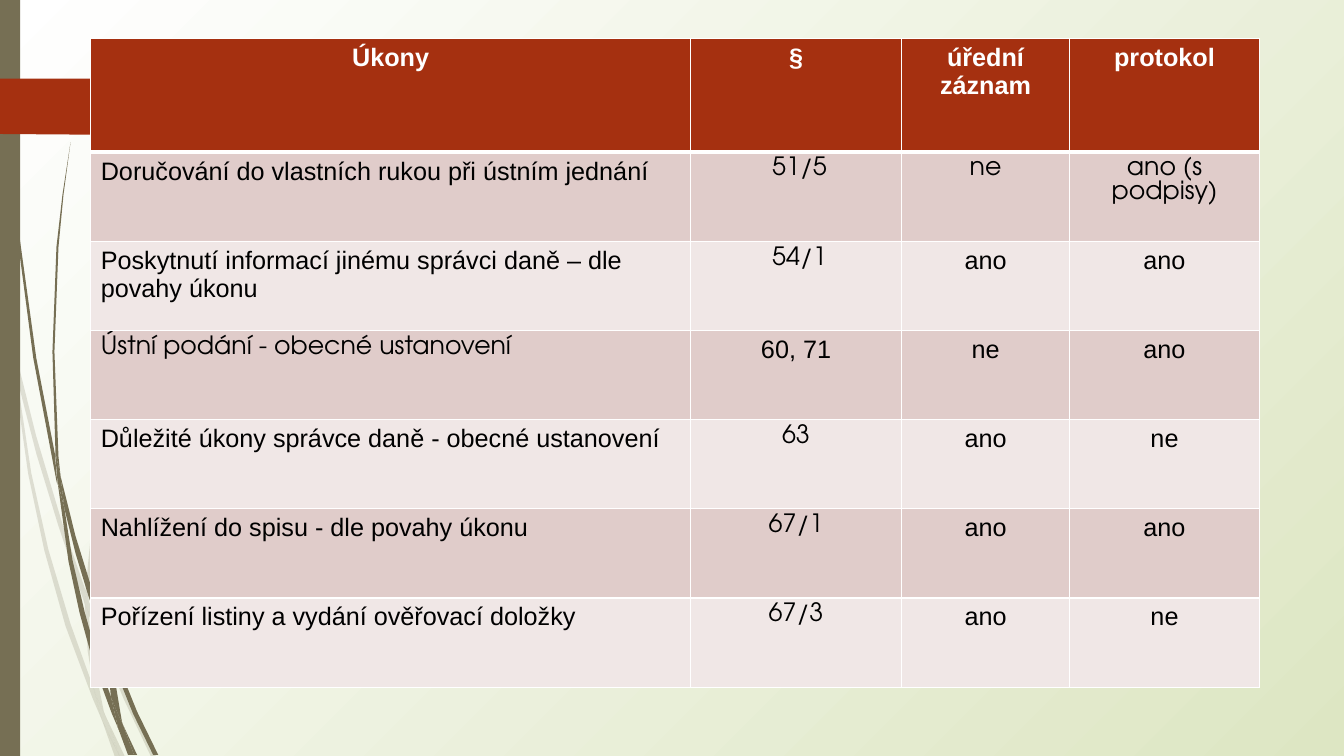
import pptx
import pptx.dml.color
import pptx.enum.shapes
import pptx.enum.text
import pptx.oxml
import pptx.oxml.ns
import pptx.util
from lxml import etree
from pptx.util import Inches

COLORS = {
    "olive": "766F54", "rust": "A53010", "white": "FFFFFF", "black": "000000",
    "green": "DDE6C3", "band": "E0CCCA", "pale": "F0E7E6",
}
BODY_FONT = "Arial"
ACCENT_FONT = "TeX Gyre Adventor"

FAINT_STALKS = [
    [(0.11, 3.5), (0.09, 3.22), (0, 2.82), (0, 2.99), (0.1, 3.44)],
    [(0.58, 5.22), (0.84, 5.99), (0.85, 5.86), (0.62, 5.2), (0.36, 4.33), (0.14, 3.45),
     (0.17, 3.76), (0.36, 4.5)],
    [(0.92, 6.07), (0.88, 5.96), (0.88, 6.1), (1.23, 6.94), (1.5, 7.51), (1.55, 7.51),
     (1.27, 6.92)],
    [(1.19, 7.51), (1.24, 7.51), (1.05, 7.11)],
    [(0.93, 6.83), (0.7, 6.19), (0.48, 5.45), (0.31, 4.69), (0.17, 3.76), (0.11, 3.5),
     (0.28, 4.7), (0.44, 5.46), (0.65, 6.21), (0.92, 6.93), (1.01, 7.14), (0.99, 7.07)],
    [(0.84, 5.99), (0.87, 6.46), (0.93, 6.83), (0.96, 6.92), (1.05, 7.11), (1.03, 7.06),
     (0.91, 6.46), (0.88, 6.1), (0.88, 6.08)],
    [(0.88, 5.84), (0.95, 5.22), (1.1, 4.62), (1.6, 3.49), (2.29, 2.45), (2.68, 1.98),
     (2.9, 1.75), (3.12, 1.54), (3.12, 1.53), (2.89, 1.75), (2.68, 1.97), (2.28, 2.44),
     (1.58, 3.48), (1.07, 4.61), (0.91, 5.22), (0.85, 5.84), (0.85, 5.86), (0.88, 5.96)],
    [(1.01, 7.14), (1.14, 7.51), (1.19, 7.51)],
    [(0.88, 6.08), (0.88, 6.1), (0.88, 5.96), (0.85, 5.86), (0.84, 5.99)],
    [(0.96, 6.92), (0.93, 6.83), (0.99, 7.07), (1.01, 7.14), (1.19, 7.51), (1.05, 7.11)],
]
DARK_STALKS = [
    [(0.07, 1.1), (0.17, 2.33), (0.33, 3.55), (0.56, 4.77), (0.57, 4.81), (0.55, 4.57),
     (0.55, 4.53), (0.36, 3.55), (0.19, 2.32), (0.08, 1.09), (0.05, 0.48), (0.04, 0),
     (0.03, 0), (0.04, 0.48)],
    [(0.88, 5.92), (1.06, 6.45), (1.06, 6.31), (0.93, 5.9), (0.75, 5.32), (0.6, 4.72),
     (0.64, 5.05), (0.75, 5.49)],
    [(1.13, 6.49), (1.1, 6.41), (1.11, 6.56), (1.32, 7.08), (1.52, 7.49), (1.57, 7.49),
     (1.36, 7.06)],
    [(1.1, 6.91), (0.98, 6.57), (0.84, 6.07), (0.72, 5.56), (0.64, 5.05), (0.57, 4.77),
     (0.68, 5.57), (0.79, 6.08), (0.93, 6.59), (1.11, 7.08), (1.17, 7.22), (1.16, 7.17)],
    [(0.6, 4.72), (0.58, 4.53), (0.54, 3.49), (0.58, 2.45), (0.63, 1.93), (0.7, 1.41),
     (0.62, 1.93), (0.56, 2.45), (0.52, 3.49), (0.55, 4.49)],
    [(1.33, 7.49), (1.36, 7.49), (1.22, 7.19)],
    [(0.57, 4.77), (0.64, 5.05), (0.6, 4.72), (0.55, 4.49), (0.55, 4.53)],
    [(1.11, 6.33), (1.15, 5.92), (1.25, 5.52), (1.58, 4.76), (2.05, 4.06), (2.31, 3.74),
     (2.61, 3.44), (2.6, 3.44), (2.31, 3.73), (2.04, 4.05), (1.56, 4.74), (1.22, 5.51),
     (1.11, 5.91), (1.06, 6.31), (1.1, 6.41)],
    [(1.17, 7.22), (1.27, 7.49), (1.31, 7.49)],
    [(1.06, 6.45), (1.1, 6.91), (1.16, 7.06), (1.22, 7.19), (1.21, 7.16), (1.11, 6.56),
     (1.09, 6.51)],
    [(1.06, 6.45), (1.11, 6.56), (1.1, 6.41), (1.06, 6.31)],
    [(1.16, 7.06), (1.1, 6.91), (1.16, 7.17), (1.17, 7.22), (1.3, 7.49), (1.33, 7.49),
     (1.22, 7.19)],
]
RIBBON = [(0, 0), (1.46, 0), (1.48, 0.01), (1.73, 0.26), (1.74, 0.28), (1.73, 0.3),
          (1.48, 0.55), (1.46, 0.56), (1.36, 0.56), (0, 0.55)]

COLUMN_WIDTHS = [5.95, 2.09, 1.67, 1.88]
HEADER_HEIGHT = 1.13
ROWS = [
    ["Úkony", "§", "úřední\nzáznam", "protokol"],
    ["Doručování do vlastních rukou při ústním jednání", " 51/5", "ne", "ano (s podpisy)"],
    ["Poskytnutí informací jinému správci daně – dle povahy úkonu", " 54/1", "ano", "ano"],
    ["Ústní podání - obecné ustanovení", "60, 71", "ne", "ano"],
    ["Důležité úkony správce daně - obecné ustanovení", "63", "ano", "ne"],
    ["Nahlížení do spisu - dle povahy úkonu", "67/1", "ano", "ano"],
    ["Pořízení listiny a vydání ověřovací doložky", "67/3", "ano", "ne"],
]
ACCENT_CELLS = {(1, 1), (1, 2), (1, 3), (2, 1), (3, 0), (4, 1), (5, 1), (6, 1)}


def rgb(name):
    """Return the named palette colour."""
    return pptx.dml.color.RGBColor.from_string(COLORS[name])


def paint(shape, color):
    """Give a shape a plain fill without line or shadow."""
    shape.shadow.inherit = False
    shape.fill.solid()
    shape.fill.fore_color.rgb = rgb(color)
    shape.line.fill.background()


def draw_outline(shapes, left, top, points, color):
    """Draw one closed outline with its points relative to left and top."""
    corners = [(Inches(left + x), Inches(top + y)) for x, y in points]
    builder = shapes.build_freeform(*corners[0], scale=1.0)
    builder.add_line_segments(corners[1:], close=True)
    shape = builder.convert_to_shape()
    paint(shape, color)
    return shape


def draw_stalks(page, left, top, outlines, opacity):
    """Draw a group of grass stalks at the given opacity in percent."""
    group = page.shapes.add_group_shape()
    for points in outlines:
        stalk = draw_outline(group.shapes, left, top, points, "olive")
        if opacity < 100:
            color = stalk.fill._xPr.find(".//" + pptx.oxml.ns.qn("a:srgbClr"))
            etree.SubElement(color, pptx.oxml.ns.qn("a:alpha"), val=str(opacity * 1000))


def set_background(page):
    """Spread a radial gradient from the top left corner."""
    fill = page.background.fill
    fill.gradient()
    for stop, name in zip(fill.gradient_stops, ("white", "green")):
        stop.color.rgb = rgb(name)
    gradient = page.background._cSld.find(".//" + pptx.oxml.ns.qn("a:gradFill"))
    linear = gradient.find(pptx.oxml.ns.qn("a:lin"))
    radial = etree.Element(pptx.oxml.ns.qn("a:path"), path="circle")
    etree.SubElement(radial, pptx.oxml.ns.qn("a:fillToRect"), r="100000", b="100000")
    gradient.replace(linear, radial)


def draw_decoration(page, left, top, height):
    """Draw the stalks, the side bar and the ribbon along the left edge."""
    draw_stalks(page, left, top, FAINT_STALKS, 20)
    draw_stalks(page, left, top, DARK_STALKS, 100)
    bar = page.shapes.add_shape(pptx.enum.shapes.MSO_SHAPE.RECTANGLE,
                                Inches(left), Inches(top), Inches(0.2), Inches(height))
    paint(bar, "olive")
    draw_outline(page.shapes, left, top + 0.78, RIBBON, "rust")


def set_borders(cell, top_width, bottom_width):
    """Outline a cell in white, with widths in points."""
    properties = cell._tc.get_or_add_tcPr()
    for side, width in zip("LRTB", (1, 1, top_width, bottom_width)):
        line = etree.SubElement(properties, pptx.oxml.ns.qn("a:ln" + side),
                                w=str(pptx.util.Pt(width)))
        solid = etree.SubElement(line, pptx.oxml.ns.qn("a:solidFill"))
        etree.SubElement(solid, pptx.oxml.ns.qn("a:srgbClr"), val=COLORS["white"])


def fill_cell(cell, text, row, column):
    """Write and format one cell according to its place in the table."""
    header = row == 0
    set_borders(cell, 3 if row == 1 else 1, 3 if header else 1)
    cell.fill.solid()
    cell.fill.fore_color.rgb = rgb("rust" if header else "band" if row % 2 else "pale")
    cell.text_frame.text = text
    align = pptx.enum.text.PP_ALIGN
    for para in cell.text_frame.paragraphs:
        para.alignment = align.CENTER if header or column else align.LEFT
        para.font.size = pptx.util.Pt(18)
        para.font.bold = header
        para.font.name = ACCENT_FONT if (row, column) in ACCENT_CELLS else BODY_FONT
        para.font.color.rgb = rgb("white" if header else "black")


def draw_table(page, left, top, width, height):
    """Place the table of acts in the given box."""
    frame = page.shapes.add_table(len(ROWS), len(COLUMN_WIDTHS), Inches(left), Inches(top),
                                  Inches(width), Inches(height))
    table = frame.table
    table.horz_banding = False
    for column, share in zip(table.columns, COLUMN_WIDTHS):
        column.width = Inches(width * share / sum(COLUMN_WIDTHS))
    body_height = (height - HEADER_HEIGHT) / (len(ROWS) - 1)
    for row, texts in enumerate(ROWS):
        table.rows[row].height = Inches(body_height if row else HEADER_HEIGHT)
        for column, text in enumerate(texts):
            fill_cell(table.cell(row, column), text, row, column)


def main():
    """Build the slide and save the deck."""
    deck = pptx.Presentation()
    deck.slide_width, deck.slide_height = Inches(13.33), Inches(7.5)
    page = deck.slides.add_slide(deck.slide_layouts[6])
    set_background(page)
    draw_decoration(page, 0, 0, 7.5)
    draw_table(page, 0.9, 0.38, 11.59, 6.44)
    deck.save("out.pptx")


if __name__ == "__main__":
    main()
